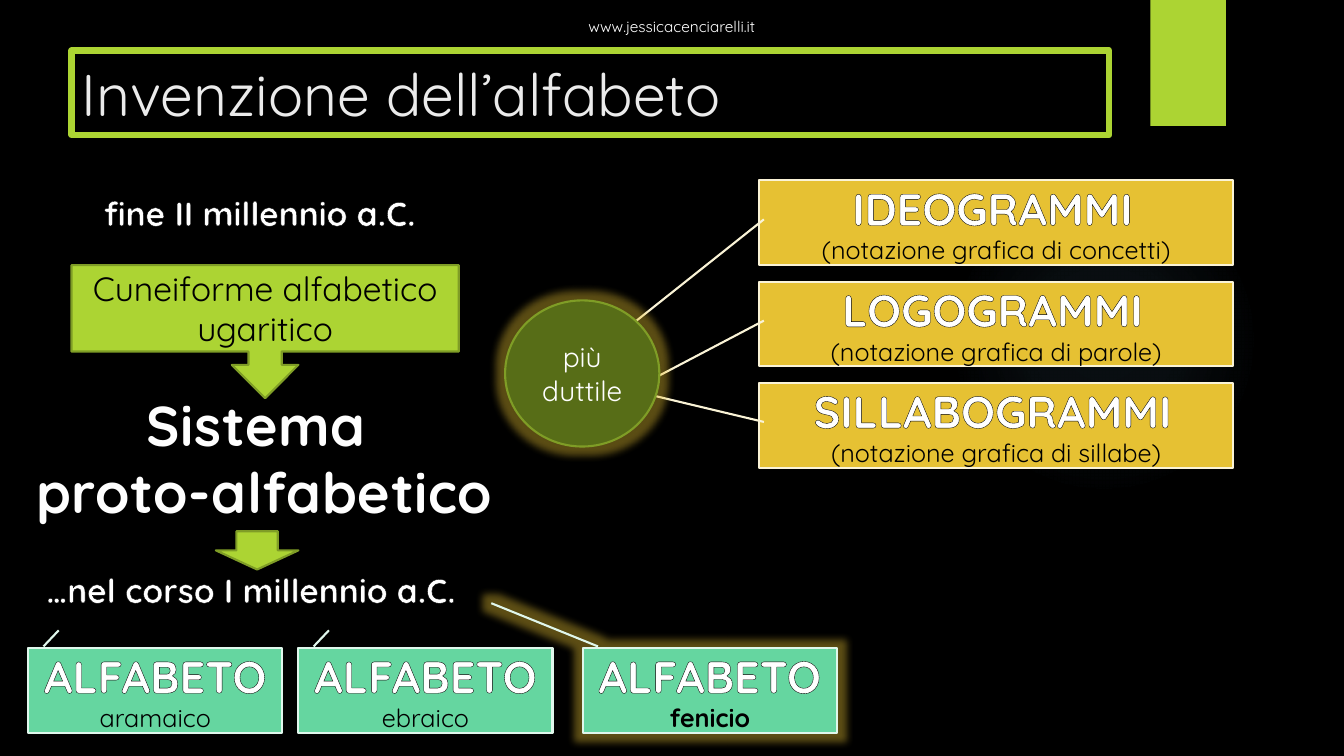
import dataclasses
import typing

import lxml.etree
import pptx
import pptx.dml.color
import pptx.enum.shapes
import pptx.enum.text
import pptx.oxml
import pptx.oxml.ns
import pptx.shapes.autoshape
import pptx.slide
import pptx.text.text
import pptx.util

Inches = pptx.util.Inches
qn = pptx.oxml.ns.qn
SHAPE = pptx.enum.shapes.MSO_SHAPE
ALIGN = pptx.enum.text.PP_ALIGN
ANCHOR = pptx.enum.text.MSO_ANCHOR
AUTO_SIZE = pptx.enum.text.MSO_AUTO_SIZE


@dataclasses.dataclass(frozen=True)
class Theme:
    font: str = "Quicksand"
    black: str = "000000"
    white: str = "FFFFFF"
    title: str = "EBEBEB"
    system: str = "FEFEFE"
    lime: str = "ACD433"
    lime_edge: str = "7F9D26"
    olive: str = "576D17"
    gold: str = "E6C133"
    gold_edge: str = "FAF3D6"
    mint: str = "65D6A0"
    mint_edge: str = "E0F7EC"
    halo: str = "7AC4F0"
    site_size: float = 11
    caption_size: float = 18
    circle_size: float = 20
    label_size: float = 24
    heading_size: float = 32
    system_size: float = 40
    title_size: float = 42


THEME = Theme()


@dataclasses.dataclass(frozen=True)
class Run:
    text: str
    size: float
    color: str
    bold: bool = False
    outline: str = ""
    shadow: bool = False


Paragraph = tuple[Run, ...]
Box = tuple[float, float, float, float]


@dataclasses.dataclass(frozen=True)
class Block:
    kind: typing.Any
    box: Box
    fill: str
    edge: str = ""
    paragraphs: tuple[Paragraph, ...] = ()
    adjustments: tuple[float, ...] = ()
    glow: bool = False


@dataclasses.dataclass(frozen=True)
class Label:
    box: Box
    paragraphs: tuple[Paragraph, ...]
    align: typing.Any = ALIGN.LEFT


def rgb(color: str) -> pptx.dml.color.RGBColor:
    return pptx.dml.color.RGBColor.from_string(color)


def add_color(parent: typing.Any, color: str, alpha: int = 100) -> None:
    element = lxml.etree.SubElement(parent, qn("a:srgbClr"), val=color)
    if alpha < 100:
        lxml.etree.SubElement(element, qn("a:alpha"), val=str(alpha * 1000))


def write_run(paragraph: typing.Any, item: Run) -> None:
    run = paragraph.add_run()
    run.text = item.text
    formats = {"name": THEME.font, "size": pptx.util.Pt(item.size), "bold": item.bold}
    for name, value in formats.items():
        setattr(run.font, name, value)
    run.font.color.rgb = rgb(item.color)
    properties = run.font._element
    if item.shadow:
        properties.set("spc", "50")
        effects = lxml.etree.Element(qn("a:effectLst"))
        shadow = lxml.etree.SubElement(
            effects, qn("a:outerShdw"), blurRad="38100", dist="25400", dir="2700000")
        add_color(shadow, THEME.olive)
        properties.find(qn("a:solidFill")).addnext(effects)
    if item.outline:
        line = lxml.etree.Element(qn("a:ln"), w="9525")
        add_color(lxml.etree.SubElement(line, qn("a:solidFill")), item.outline)
        properties.insert(0, line)


def write_text(frame: pptx.text.text.TextFrame, paragraphs: tuple[Paragraph, ...],
               align: typing.Any, **formats: typing.Any) -> None:
    for name, value in formats.items():
        setattr(frame, name, value)
    for index, runs in enumerate(paragraphs):
        paragraph = frame.add_paragraph() if index else frame.paragraphs[0]
        paragraph.alignment = align
        for item in runs:
            write_run(paragraph, item)


def add_block(slide: pptx.slide.Slide, block: Block) -> pptx.shapes.autoshape.Shape:
    shape = slide.shapes.add_shape(block.kind, *map(Inches, block.box))
    shape.shadow.inherit = False
    shape.fill.solid()
    shape.fill.fore_color.rgb = rgb(block.fill)
    if block.edge:
        shape.line.color.rgb = rgb(block.edge)
        shape.line.width = pptx.util.Pt(1.5)
    else:
        shape.line.fill.background()
    for index, value in enumerate(block.adjustments):
        shape.adjustments[index] = value
    if block.glow:
        effects = shape._element.spPr.find(qn("a:effectLst"))
        glow = lxml.etree.SubElement(effects, qn("a:glow"), rad=str(pptx.util.Pt(11)))
        add_color(glow, THEME.gold, 40)
    write_text(shape.text_frame, block.paragraphs, ALIGN.CENTER,
               word_wrap=True, vertical_anchor=ANCHOR.MIDDLE)
    return shape


def add_halo(slide: pptx.slide.Slide) -> None:
    """Draw the faint round light behind the yellow boxes."""
    shape = add_block(slide, Block(SHAPE.OVAL, (9.41, 1.83, 3.08, 3.08), THEME.halo))
    gradient = lxml.etree.Element(qn("a:gradFill"))
    stops = lxml.etree.SubElement(gradient, qn("a:gsLst"))
    for position, alpha in ((0, 7), (36, 6), (69, 0)):
        stop = lxml.etree.SubElement(stops, qn("a:gs"), pos=str(position * 1000))
        add_color(stop, THEME.halo, alpha)
    circle = lxml.etree.SubElement(gradient, qn("a:path"), path="circle")
    lxml.etree.SubElement(circle, qn("a:fillToRect"),
                          dict.fromkeys("ltrb", "50000"))
    properties = shape._element.spPr
    properties.replace(properties.find(qn("a:solidFill")), gradient)


def add_label(slide: pptx.slide.Slide, label: Label) -> None:
    frame = slide.shapes.add_textbox(*map(Inches, label.box)).text_frame
    write_text(frame, label.paragraphs, label.align,
               word_wrap=False, auto_size=AUTO_SIZE.SHAPE_TO_FIT_TEXT)


def add_title(slide: pptx.slide.Slide, text: str) -> None:
    title = slide.shapes.title
    places = zip(("left", "top", "width", "height"), (0.71, 0.5, 10.29, 0.84))
    for name, value in places:
        setattr(title, name, Inches(value))
    title.line.color.rgb = rgb(THEME.lime)
    title.line.width = pptx.util.Pt(4.5)
    write_text(title.text_frame, ((Run(text, THEME.title_size, THEME.title),),),
               ALIGN.LEFT, auto_size=AUTO_SIZE.NONE, vertical_anchor=ANCHOR.MIDDLE)


def heading(text: str) -> Run:
    return Run(text, THEME.heading_size, THEME.white, True, THEME.black)


def sign_block(row: int, name: str, meaning: str, tip: tuple[float, float]) -> Block:
    caption = Run(f"(notazione grafica di {meaning})", THEME.caption_size, THEME.black)
    space = Run(" ", THEME.caption_size, THEME.white)
    return Block(SHAPE.LINE_CALLOUT_1, (7.53, 1.79 + 1.005 * row, 4.7, 0.84),
                 THEME.gold, THEME.gold_edge, ((heading(name), space), (caption,)),
                 (0.46, 0.01, *tip))


def alphabet_block(left: float, name: str, chosen: bool = False) -> Block:
    caption = Run(name, THEME.caption_size, THEME.black, chosen)
    tip = (-0.53, -0.36) if chosen else (-0.21, 0.12)
    return Block(SHAPE.LINE_CALLOUT_1, (left, 6.43, 2.52, 0.84), THEME.mint,
                 THEME.mint_edge, ((heading("ALFABETO"),), (caption,)),
                 (-0.02, 0.06, *tip), chosen)


def period_label(box: Box, text: str) -> Label:
    return Label(box, ((Run(text, THEME.label_size, THEME.white, True, THEME.black),),))


def main() -> None:
    presentation = pptx.Presentation()
    presentation.slide_width, presentation.slide_height = Inches(13.33), Inches(7.5)
    slide = presentation.slides.add_slide(presentation.slide_layouts[5])
    slide.background.fill.solid()
    slide.background.fill.fore_color.rgb = rgb(THEME.black)
    add_halo(slide)
    add_title(slide, "Invenzione dell’alfabeto")
    cuneiform = Run("Cuneiforme alfabetico ugaritico", THEME.label_size, THEME.black)
    flexible = Run("più duttile", THEME.circle_size, THEME.white)
    blocks = (
        Block(SHAPE.RECTANGLE, (11.41, 0, 0.75, 1.25), THEME.lime),
        Block(SHAPE.DOWN_ARROW_CALLOUT, (0.71, 2.63, 3.84, 1.32), THEME.lime,
              THEME.lime_edge, ((cuneiform,),)),
        sign_block(0, "IDEOGRAMMI", "concetti", (1.75, -0.28)),
        sign_block(1, "LOGOGRAMMI", "parole", (1.4, -0.31)),
        sign_block(2, "SILLABOGRAMMI", "sillabe", (0.14, -0.23)),
        Block(SHAPE.OVAL, (5.01, 2.98, 1.53, 1.45), THEME.olive, THEME.lime_edge,
              ((flexible,),), glow=True),
        Block(SHAPE.DOWN_ARROW, (2.14, 5.27, 0.82, 0.38), THEME.lime, THEME.lime_edge),
        alphabet_block(0.28, "aramaico"),
        alphabet_block(2.96, "ebraico"),
        alphabet_block(5.78, "fenicio", chosen=True),
    )
    for block in blocks:
        add_block(slide, block)
    site = Run("www.jessicacenciarelli.it", THEME.site_size, THEME.white)
    system = tuple((Run(text, THEME.system_size, THEME.system, True, THEME.lime, True),)
                   for text in ("Sistema ", "proto-alfabetico"))
    labels = (
        Label((5.47, 0.12, 2.39, 0.29), ((site,),), ALIGN.CENTER),
        Label((0.24, 3.82, 4.77, 1.45), system, ALIGN.CENTER),
        period_label((0.93, 1.86, 3.42, 0.5), "fine II millennio a.C."),
        period_label((0.36, 5.6, 4.56, 0.5), "…nel corso I millennio a.C."),
    )
    for label in labels:
        add_label(slide, label)
    presentation.save("out.pptx")


if __name__ == "__main__":
    main()
